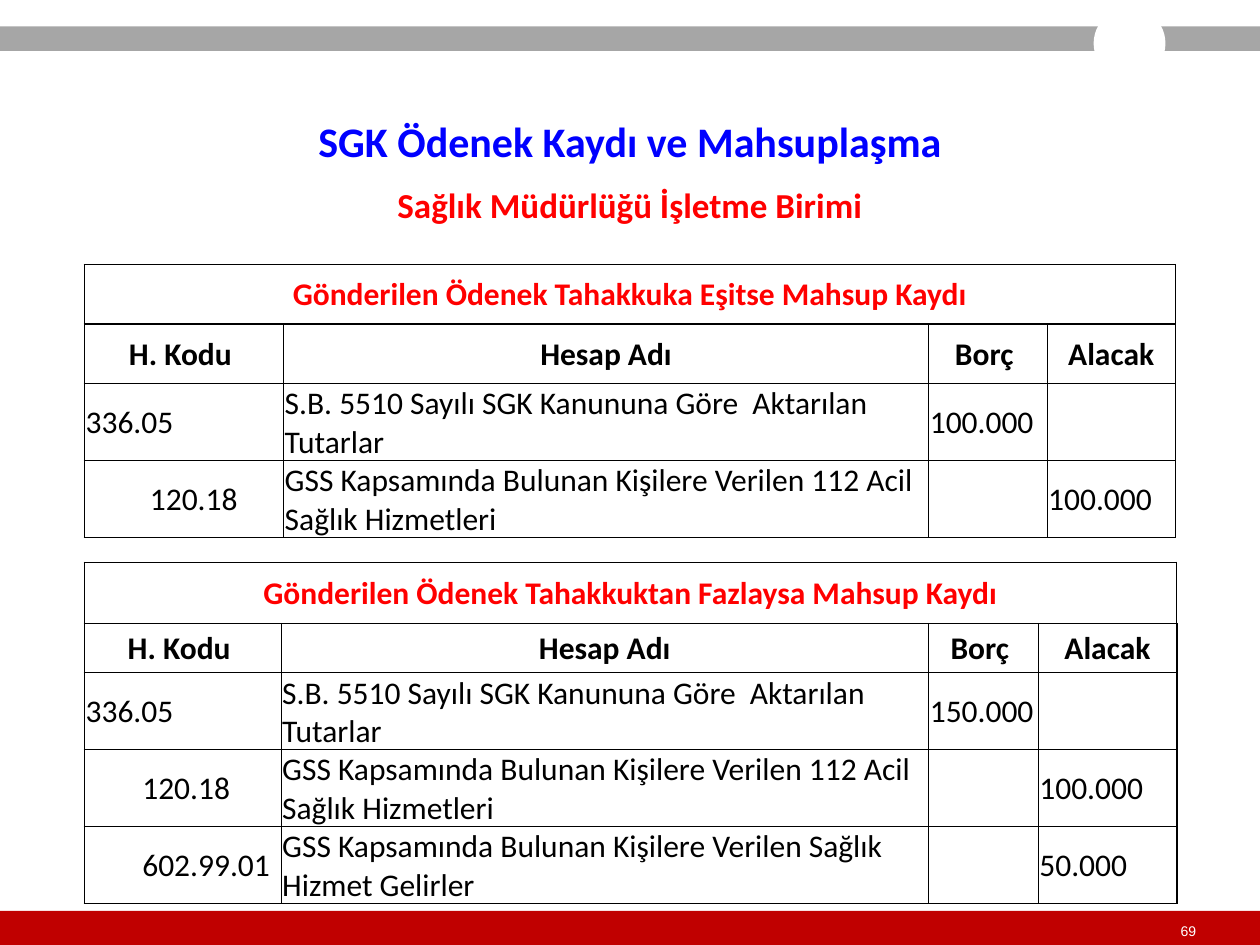
from lxml import etree
from pptx import Presentation
from pptx.dml.color import RGBColor
from pptx.enum.shapes import MSO_SHAPE
from pptx.enum.text import MSO_ANCHOR, PP_ALIGN
from pptx.oxml.ns import qn
from pptx.util import Inches, Pt

RECT, OVAL = MSO_SHAPE.RECTANGLE, MSO_SHAPE.OVAL
TOP, MIDDLE = MSO_ANCHOR.TOP, MSO_ANCHOR.MIDDLE
LEFT, CENTER = PP_ALIGN.LEFT, PP_ALIGN.CENTER

SLIDE_W, SLIDE_H = Inches(10), Inches(7.5)
CELL_INSET = Inches(0.01)
THIN, THICK = Pt(0.5), Pt(1)
BLACK, RED, BLUE, WHITE = "000000", "FF0000", "0000FF", "FFFFFF"
DARK_RED, GREY = "C00000", "A6A6A6"

COLUMN_HEADS = ["H. Kodu ", "Hesap Adı", "Borç ", "Alacak"]
TRANSFERRED = "S.B. 5510 Sayılı SGK Kanununa Göre  Aktarılan Tutarlar"
EMERGENCY = "GSS Kapsamında Bulunan Kişilere Verilen 112 Acil Sağlık Hizmetleri"
INCOME = "GSS Kapsamında Bulunan Kişilere Verilen Sağlık Hizmet Gelirler"


def color(value):
    return RGBColor.from_string(value)


def place(box):
    """Turn percentages of the slide (left, top, width, height) into lengths."""
    sides = (SLIDE_W, SLIDE_H, SLIDE_W, SLIDE_H)
    return [round(side * share / 100) for side, share in zip(sides, box)]


def write(frame, text, size, ink, bold=False, align=LEFT, font="Calibri"):
    para = frame.paragraphs[0]
    para.text = text
    para.alignment = align
    para.font.size = Pt(size)
    for span in para.runs:
        span.font.name = font
        span.font.size = Pt(size)
        span.font.bold = bold
        span.font.color.rgb = color(ink)


def add_block(page, box, fill, kind=RECT):
    shape = page.shapes.add_shape(kind, *place(box))
    shape.shadow.inherit = False
    shape.fill.solid()
    shape.fill.fore_color.rgb = color(fill)
    shape.line.fill.background()
    return shape


def add_bands(page, number):
    # Footer with page number
    add_block(page, (0, 96.4, 100, 4), DARK_RED)
    label = page.shapes.add_textbox(*place((93.7, 97.6, 1.4, 1.73)))
    frame = label.text_frame
    frame.margin_left = frame.margin_right = 0
    frame.margin_top = frame.margin_bottom = 0
    frame.vertical_anchor = MIDDLE
    frame.word_wrap = False
    write(frame, number, 8, WHITE, font="Arial")
    # Header stripe with round cut-out
    add_block(page, (0, 2.8, 100, 2.6), GREY)
    add_block(page, (86.8, 0.8, 5.7, 7.6), WHITE, OVAL)


def add_headings(page, title_box, title, subtitle_box, subtitle):
    subtitle_label = page.shapes.add_textbox(*place(subtitle_box))
    subtitle_label.text_frame.word_wrap = True
    write(subtitle_label.text_frame, subtitle, 20, RED, True, CENTER)
    title_block = add_block(page, title_box, WHITE)
    title_block.text_frame.vertical_anchor = MIDDLE
    write(title_block.text_frame, title, 24, BLUE, True, CENTER)


def set_borders(cell, widths):
    properties = cell._tc.get_or_add_tcPr()
    for side, width in widths.items():
        line = etree.SubElement(properties, qn("a:ln" + side), w=str(width))
        fill = etree.SubElement(line, qn("a:solidFill"))
        etree.SubElement(fill, qn("a:srgbClr"), val=BLACK)


def add_ledger(page, box, heading, entries, columns, rows, indent):
    """Columns and rows are percentages of the slide; indent is for credit codes."""
    contents = [[heading, "", "", ""], COLUMN_HEADS] + entries
    last_row, last_column = len(contents) - 1, len(columns) - 1
    frame = page.shapes.add_table(len(contents), len(columns), *place(box))
    table = frame.table
    table.first_row = table.horz_banding = False
    for column, share in zip(table.columns, columns):
        column.width = round(SLIDE_W * share / 100)
    for row, share in zip(table.rows, rows):
        row.height = round(SLIDE_H * share / 100)
    table.cell(0, 0).merge(table.cell(0, last_column))

    for r, texts in enumerate(contents):
        for c, text in enumerate(texts):
            cell = table.cell(r, c)
            set_borders(cell, {
                "L": THICK if c == 0 else THIN,
                "R": THICK if c == last_column else THIN,
                "T": THICK if r < 2 else THIN,
                "B": THICK if r in (0, last_row) else THIN,
            })
            cell.fill.background()
            cell.vertical_anchor = MIDDLE
            cell.margin_left = cell.margin_right = cell.margin_top = CELL_INSET
            cell.margin_bottom = 0
            is_head = r < 2
            write(cell.text_frame, text, 18, RED if r == 0 else BLACK,
                  is_head, CENTER if is_head else LEFT)
            # Credit entries stand in from the debit code
            if r > 2 and c == 0:
                properties = cell.text_frame.paragraphs[0]._p.get_or_add_pPr()
                properties.set("marL", str(round(SLIDE_W * indent / 100)))


def main():
    deck = Presentation()
    deck.slide_width, deck.slide_height = SLIDE_W, SLIDE_H
    page = deck.slides.add_slide(deck.slide_layouts[6])

    add_bands(page, "69")
    add_ledger(
        page, (6.7, 28, 86.6, 28.8),
        "Gönderilen Ödenek Tahakkuka Eşitse Mahsup Kaydı",
        [["336.05", TRANSFERRED, "100.000", ""],
         ["120.18", EMERGENCY, "", "100.000"]],
        (15.8, 51.2, 9.4, 10.2), (6.3, 6.3, 8.1, 8.1), 5.1)
    add_ledger(
        page, (6.7, 59.5, 86.6, 36),
        "Gönderilen Ödenek Tahakkuktan Fazlaysa Mahsup Kaydı",
        [["336.05", TRANSFERRED, "150.000", ""],
         ["120.18", EMERGENCY, "", "100.000"],
         ["602.99.01", INCOME, "", "50.000"]],
        (15.6, 51.4, 8.7, 11), (6.5, 5.2, 8.1, 8.1, 8.1), 4.5)
    add_headings(
        page, (0, 12.3, 100, 5.2), "SGK Ödenek Kaydı ve Mahsuplaşma",
        (0, 18.8, 100, 5.8), "Sağlık Müdürlüğü İşletme Birimi")

    deck.save("out.pptx")


if __name__ == "__main__":
    main()
